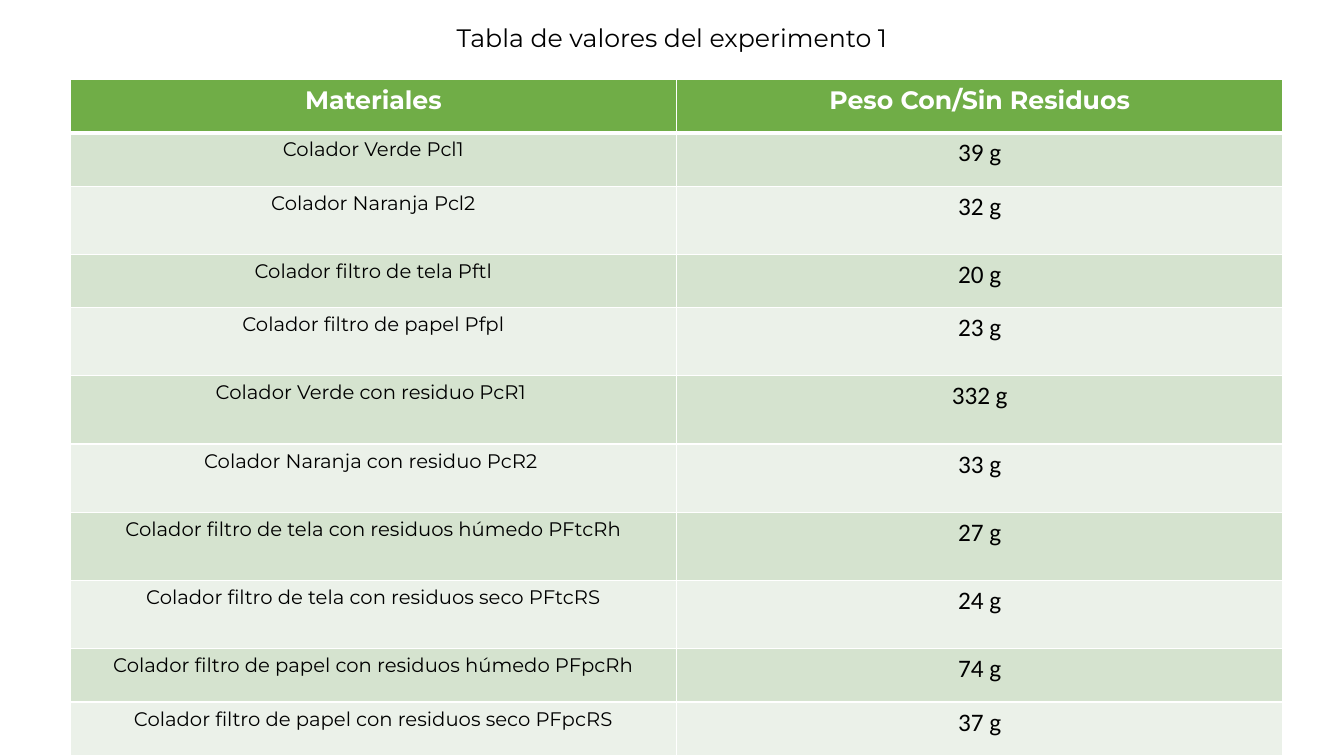
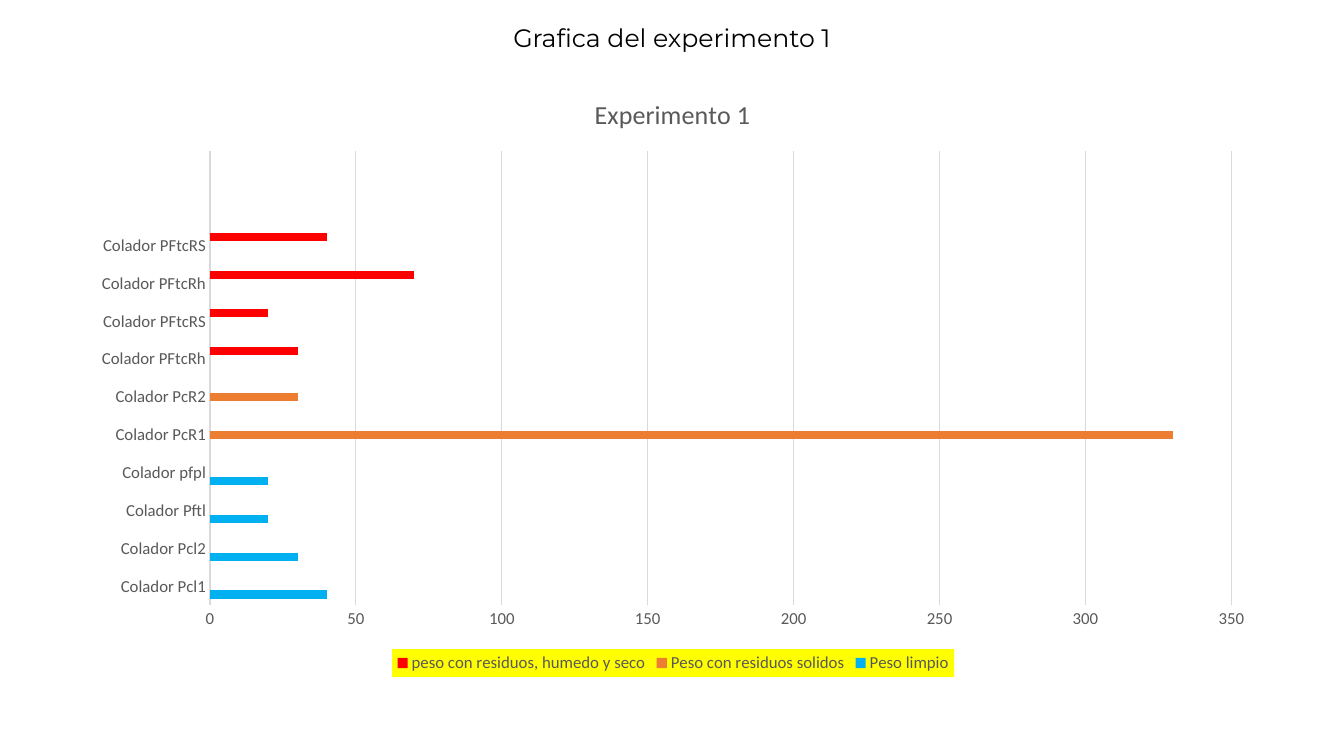
import pptx
import pptx.chart.data
import pptx.dml.color
import pptx.enum.chart
import pptx.enum.text
import pptx.oxml
import pptx.oxml.ns
import pptx.util
from dataclasses import dataclass

Cm = pptx.util.Cm
Pt = pptx.util.Pt


@dataclass(frozen=True)
class Theme:
    heading_font: str = "Montserrat"
    body_font: str = "Calibri"
    chart_title: float = 18.6
    large: int = 18
    medium: int = 14
    small: int = 12
    black: str = "000000"
    white: str = "FFFFFF"
    gray: str = "595959"
    grid: str = "D9D9D9"
    header: str = "70AD47"
    bands: tuple = ("D5E3CF", "EBF1E9")
    clean: str = "00B0F0"
    solid: str = "ED7D31"
    filtered: str = "FF0000"
    legend: str = "FFFF00"


THEME = Theme()

MATERIALS = [
    ("Colador Verde Pcl1", 39, "Colador Pcl1"),
    ("Colador Naranja Pcl2", 32, "Colador Pcl2"),
    ("Colador filtro de tela Pftl", 20, "Colador Pftl"),
    ("Colador filtro de papel Pfpl", 23, "Colador pfpl"),
    ("Colador Verde con residuo PcR1 ", 332, "Colador PcR1"),
    ("Colador Naranja con residuo PcR2 ", 33, "Colador PcR2"),
    ("Colador filtro de tela con residuos húmedo PFtcRh", 27, "Colador PFtcRh"),
    ("Colador filtro de tela con residuos seco PFtcRS", 24, "Colador PFtcRS"),
    ("Colador filtro de papel con residuos húmedo PFpcRh", 74, "Colador PFtcRh"),
    ("Colador filtro de papel con residuos seco PFpcRS", 37, "Colador PFtcRS"),
]
EMPTY_CATEGORIES = 2
SERIES = [
    ("Peso limpio", 0, 4, THEME.clean),
    ("Peso con residuos solidos", 4, 6, THEME.solid),
    ("peso con residuos, humedo y seco", 6, 10, THEME.filtered),
]
SHORT_ROW, TALL_ROW = 1.34, 1.72
TALL_ROWS = {2, 4, 5, 6, 7, 8}


def rgb(color):
    return pptx.dml.color.RGBColor.from_string(color)


def style_font(font, name, size, color, bold=False):
    font.name = name
    font.size = Pt(size)
    font.bold = bold
    font.color.rgb = rgb(color)


def write_centered(frame, text, name, size, color, bold=False):
    frame.text = text
    para = frame.paragraphs[0]
    para.alignment = pptx.enum.text.PP_ALIGN.CENTER
    style_font(para.runs[0].font, name, size, color, bold)


def add_page(deck, title):
    page = deck.slides.add_slide(deck.slide_layouts[5])
    box = page.shapes.title
    box.left, box.top, box.width, box.height = Cm(9.34), Cm(0.43), Cm(15.19), Cm(1.02)
    write_centered(box.text_frame, title, THEME.heading_font, THEME.large, THEME.black)
    return page


def add_borders(cell, top, bottom):
    properties = cell._tc.get_or_add_tcPr()
    for side, width in (("L", 1), ("R", 1), ("T", top), ("B", bottom)):
        properties.append(pptx.oxml.parse_xml(
            f'<a:ln{side} {pptx.oxml.ns.nsdecls("a")} w="{Pt(width)}"><a:solidFill>'
            f'<a:srgbClr val="{THEME.white}"/></a:solidFill></a:ln{side}>'))


def add_weight_table(page, left, top, width):
    rows = [("Materiales", "Peso Con/Sin Residuos")]
    rows += [(name, f"{weight} g") for name, weight, label in MATERIALS]
    heights = [Cm(TALL_ROW if index in TALL_ROWS else SHORT_ROW) for index in range(len(rows))]
    table = page.shapes.add_table(len(rows), 2, left, top, width, sum(heights)).table
    header_style = (THEME.heading_font, THEME.large, THEME.white, True)
    body_styles = (
        (THEME.heading_font, THEME.medium, THEME.black),
        (THEME.body_font, THEME.large, THEME.black),
    )
    for index, texts in enumerate(rows):
        table.rows[index].height = heights[index]
        fill = THEME.bands[(index - 1) % 2] if index else THEME.header
        for column, text in enumerate(texts):
            cell = table.cell(index, column)
            style = body_styles[column] if index else header_style
            write_centered(cell.text_frame, text, *style)
            add_borders(cell, 3 if index == 1 else 1, 1 if index else 3)
            cell.fill.solid()
            cell.fill.fore_color.rgb = rgb(fill)


def set_layout(element, position, target="", **fractions):
    for old in element.findall(pptx.oxml.ns.qn("c:layout")):
        element.remove(old)
    modes = "".join(f'<c:{axis}Mode val="edge"/>' for axis in "xy")
    values = "".join(f'<c:{key} val="{value}"/>' for key, value in fractions.items())
    element.insert(position, pptx.oxml.parse_xml(
        f'<c:layout {pptx.oxml.ns.nsdecls("c")}><c:manualLayout>'
        f'{target}{modes}{values}</c:manualLayout></c:layout>'))


def style_axis(axis):
    axis.major_tick_mark = pptx.enum.chart.XL_TICK_MARK.NONE
    axis.minor_tick_mark = pptx.enum.chart.XL_TICK_MARK.NONE
    axis.format.line.fill.background()
    style_font(axis.tick_labels.font, THEME.body_font, THEME.small, THEME.gray)


def style_legend(chart):
    chart.has_legend = True
    legend = chart.legend
    legend.position = pptx.enum.chart.XL_LEGEND_POSITION.BOTTOM
    legend.include_in_layout = False
    style_font(legend.font, THEME.body_font, THEME.small, THEME.gray)
    text_properties = chart.element.xpath(".//c:legend/c:txPr")[0]
    text_properties.addprevious(pptx.oxml.parse_xml(
        f'<c:spPr {pptx.oxml.ns.nsdecls("c", "a")}><a:solidFill>'
        f'<a:srgbClr val="{THEME.legend}"/></a:solidFill></c:spPr>'))


def add_weight_chart(page, left, top, width, height):
    data = pptx.chart.data.CategoryChartData()
    data.categories = [label for name, weight, label in MATERIALS] + [""] * EMPTY_CATEGORIES
    for name, first, end, color in SERIES:
        values = [round(row[1], -1) if first <= index < end else None
                  for index, row in enumerate(MATERIALS)]
        data.add_series(name, values + [None] * EMPTY_CATEGORIES)
    kind = pptx.enum.chart.XL_CHART_TYPE.BAR_CLUSTERED
    chart = page.shapes.add_chart(kind, left, top, width, height, data).chart
    style_font(chart.font, THEME.body_font, THEME.small, THEME.gray)

    plot = chart.plots[0]
    plot.gap_width = 150
    plot.overlap = 0
    plot.vary_by_categories = False
    for series, (name, first, end, color) in zip(plot.series, SERIES):
        series.format.fill.solid()
        series.format.fill.fore_color.rgb = rgb(color)

    style_axis(chart.category_axis)
    axis = chart.value_axis
    style_axis(axis)
    axis.minimum_scale, axis.maximum_scale, axis.major_unit = 0, 350, 50
    axis.has_major_gridlines = True
    axis.major_gridlines.format.line.color.rgb = rgb(THEME.grid)
    axis.major_gridlines.format.line.width = Pt(0.75)

    chart.has_title = True
    write_centered(chart.chart_title.text_frame, "Experimento 1",
                   THEME.body_font, THEME.chart_title, THEME.gray)
    set_layout(chart.element.xpath("./c:chart/c:title")[0], 1, x=0.43, y=0.02)
    set_layout(chart.element.xpath(".//c:plotArea")[0], 0,
               '<c:layoutTarget val="inner"/>', x=0.11, y=0.12, w=0.86, h=0.76)
    style_legend(chart)


def main():
    deck = pptx.Presentation()
    deck.slide_width, deck.slide_height = Cm(33.87), Cm(19.05)
    page = add_page(deck, "Tabla de valores del experimento 1")
    add_weight_table(page, Cm(1.77), Cm(2.01), Cm(30.56))
    page = add_page(deck, "Grafica del experimento 1")
    add_weight_chart(page, Cm(2), Cm(2), Cm(29.93), Cm(15.06))
    deck.save("out.pptx")


if __name__ == "__main__":
    main()
